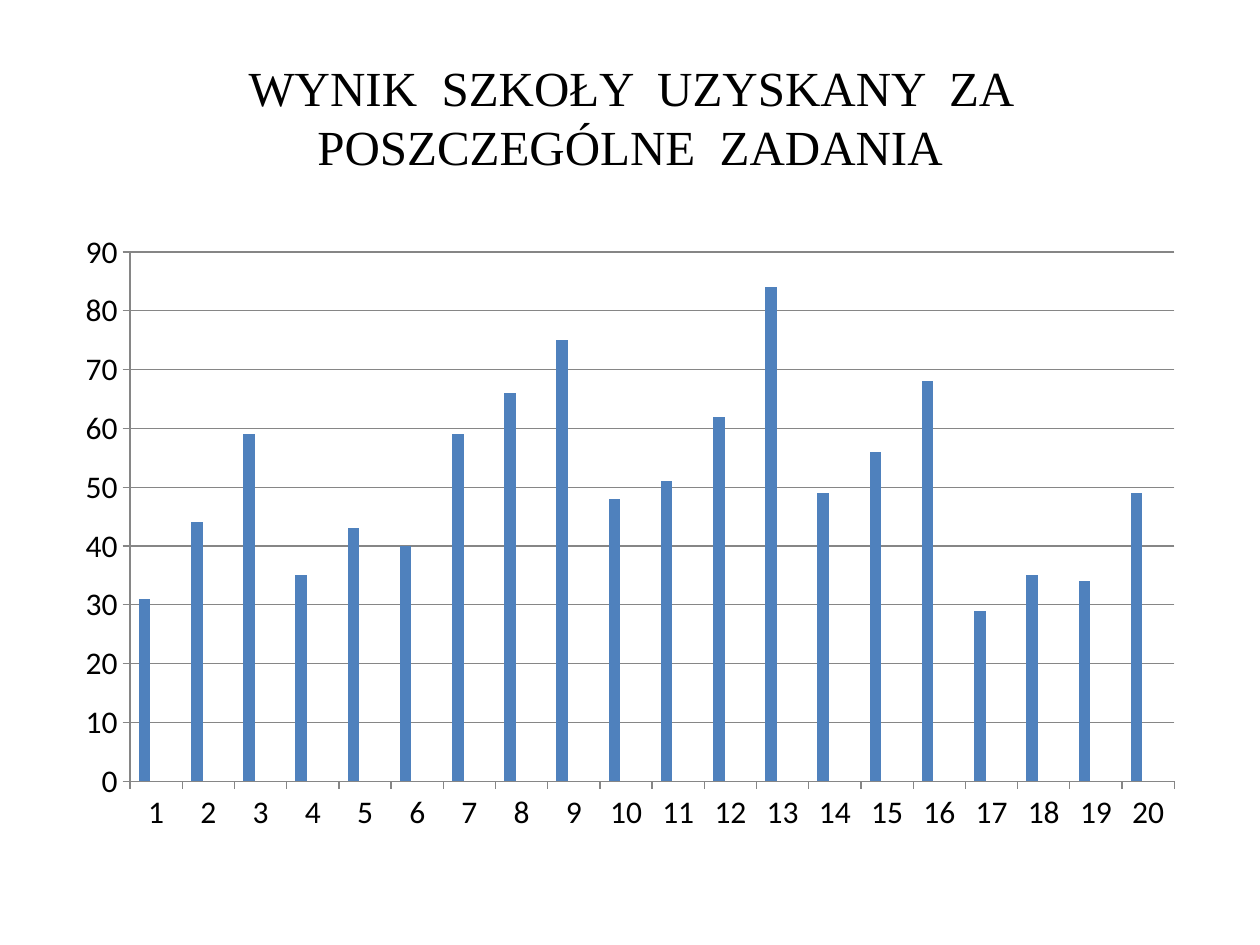
from pptx import Presentation
from pptx.chart.data import CategoryChartData
from pptx.dml.color import RGBColor
from pptx.enum.chart import XL_CHART_TYPE as ChartType, XL_TICK_MARK as Tick
from pptx.enum.text import MSO_ANCHOR as Anchor, PP_ALIGN as Align
from pptx.util import Inches, Pt

COLORS = {
    "text": "000000",
    "axis": "868686",
    "Series 1": "4F81BD",
    "Series 2": "C0504D",
    "Series 3": "9BBB59",
}
SCORES = [31, 44, 59, 35, 43, 40, 59, 66, 75, 48,
          51, 62, 84, 49, 56, 68, 29, 35, 34, 49]


def rgb(name):
    return RGBColor.from_string(COLORS[name])


def set_title(slide, text):
    sp = slide.shapes.title
    sp.left, sp.top, sp.width, sp.height = map(Inches, (0.5, 0.3, 9, 1.25))
    tf = sp.text_frame
    tf.word_wrap = True
    tf.vertical_anchor = Anchor.MIDDLE
    p = tf.paragraphs[0]
    p.alignment = Align.CENTER
    r = p.add_run()
    r.text = text
    r.font.size = Pt(28)
    r.font.name = "Times New Roman"
    r.font.color.rgb = rgb("text")


def style_line(line):
    line.color.rgb = rgb("axis")
    line.width = Pt(0.75)


def style_axis(axis):
    axis.major_tick_mark = Tick.OUTSIDE
    axis.minor_tick_mark = Tick.NONE
    style_line(axis.format.line)


def add_score_chart(slide):
    """Scores fill the first series; the other two stay empty but keep their slots."""
    data = CategoryChartData()
    data.categories = [str(n) for n in range(1, len(SCORES) + 1)]
    data.add_series("Series 1", SCORES)
    for name in ("Series 2", "Series 3"):
        data.add_series(name, [None] * len(SCORES))
    chart = slide.shapes.add_chart(
        ChartType.COLUMN_CLUSTERED,
        Inches(0.5), Inches(1.75), Inches(9), Inches(4.95), data).chart

    chart.has_title = False
    chart.has_legend = False
    chart.font.name = "Calibri"
    chart.font.size = Pt(18)
    chart.font.color.rgb = rgb("text")

    plot = chart.plots[0]
    plot.gap_width = 150
    plot.vary_by_categories = False
    for series in plot.series:
        series.format.fill.solid()
        series.format.fill.fore_color.rgb = rgb(series.name)

    style_axis(chart.category_axis)
    values = chart.value_axis
    style_axis(values)
    values.minimum_scale, values.maximum_scale, values.major_unit = 0, 90, 10
    values.has_major_gridlines = True
    style_line(values.major_gridlines.format.line)


def main():
    prs = Presentation()
    prs.slide_width, prs.slide_height = Inches(10), Inches(7.5)
    slide = prs.slides.add_slide(prs.slide_layouts[5])
    set_title(slide, "WYNIK  SZKOŁY  UZYSKANY  ZA POSZCZEGÓLNE  ZADANIA")
    add_score_chart(slide)
    prs.save("out.pptx")


if __name__ == "__main__":
    main()
